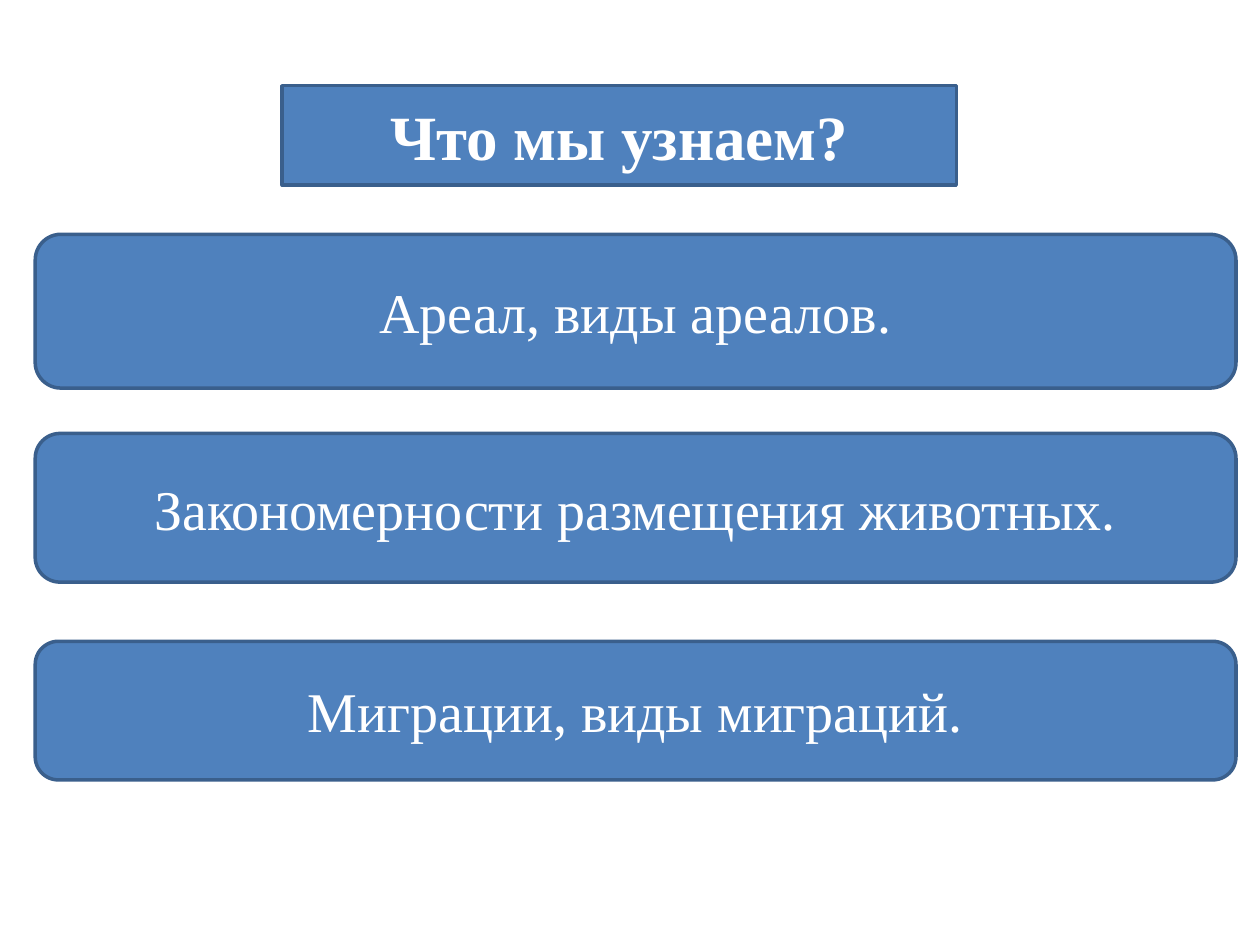
from pptx import Presentation
from pptx.dml.color import RGBColor as RGB
from pptx.enum.shapes import MSO_SHAPE as SHAPE
from pptx.enum.text import MSO_ANCHOR as ANCHOR, MSO_AUTO_SIZE as FIT, PP_ALIGN as ALIGN
from pptx.oxml import parse_xml
from pptx.oxml.ns import nsdecls
from pptx.util import Inches, Pt

COLORS = {"fill": "4F81BD", "line": "3A5F8C", "text": "FFFFFF"}
FONT = "Times New Roman"
UNIT = 0.1
LEFT, WIDTH = 2.8, 95.3
TOPICS = [
    ("Ареал, виды ареалов.", 18.6, 12.2),
    ("Закономерности размещения животных.", 34.4, 11.8),
    ("Миграции, виды миграций.", 50.9, 11),
]


class Deck:
    """Holds the style and the current slide, measured on a grid of 100 columns by 75 rows."""

    def __init__(self, prs):
        self.s = prs.slides.add_slide(prs.slide_layouts[5])

    def box(self, *cells):
        return [Inches(c * UNIT) for c in cells]

    def format(self, sp, text, size, bold=False):
        sp.fill.solid()
        sp.fill.fore_color.rgb = RGB.from_string(COLORS["fill"])
        sp.line.color.rgb = RGB.from_string(COLORS["line"])
        sp.line.width = Pt(2)
        tf = sp.text_frame
        frame = {"word_wrap": True, "auto_size": FIT.NONE, "vertical_anchor": ANCHOR.MIDDLE}
        for name, value in frame.items():
            setattr(tf, name, value)
        p = tf.paragraphs[0]
        p.alignment = ALIGN.CENTER
        r = p.add_run()
        r.text = text
        for name, value in {"name": FONT, "size": Pt(size), "bold": bold}.items():
            setattr(r.font, name, value)
        r.font.color.rgb = RGB.from_string(COLORS["text"])

    def title(self, text, *cells):
        sp = self.s.shapes.title
        for name, value in zip(("left", "top", "width", "height"), self.box(*cells)):
            setattr(sp, name, value)
        sp.element.spPr.append(
            parse_xml(f'<a:prstGeom {nsdecls("a")} prst="roundRect"><a:avLst/></a:prstGeom>')
        )
        self.format(sp, text, 36, True)

    def panel(self, text, *cells):
        sp = self.s.shapes.add_shape(SHAPE.ROUNDED_RECTANGLE, *self.box(*cells))
        sp.shadow.inherit = False
        self.format(sp, text, 32)


def main():
    prs = Presentation()
    prs.slide_width, prs.slide_height = Inches(10), Inches(7.5)
    deck = Deck(prs)
    deck.title("Что мы узнаем?", 22.4, 6.8, 53.5, 7.9)
    for text, top, height in TOPICS:
        deck.panel(text, LEFT, top, WIDTH, height)
    prs.save("out.pptx")


if __name__ == "__main__":
    main()
